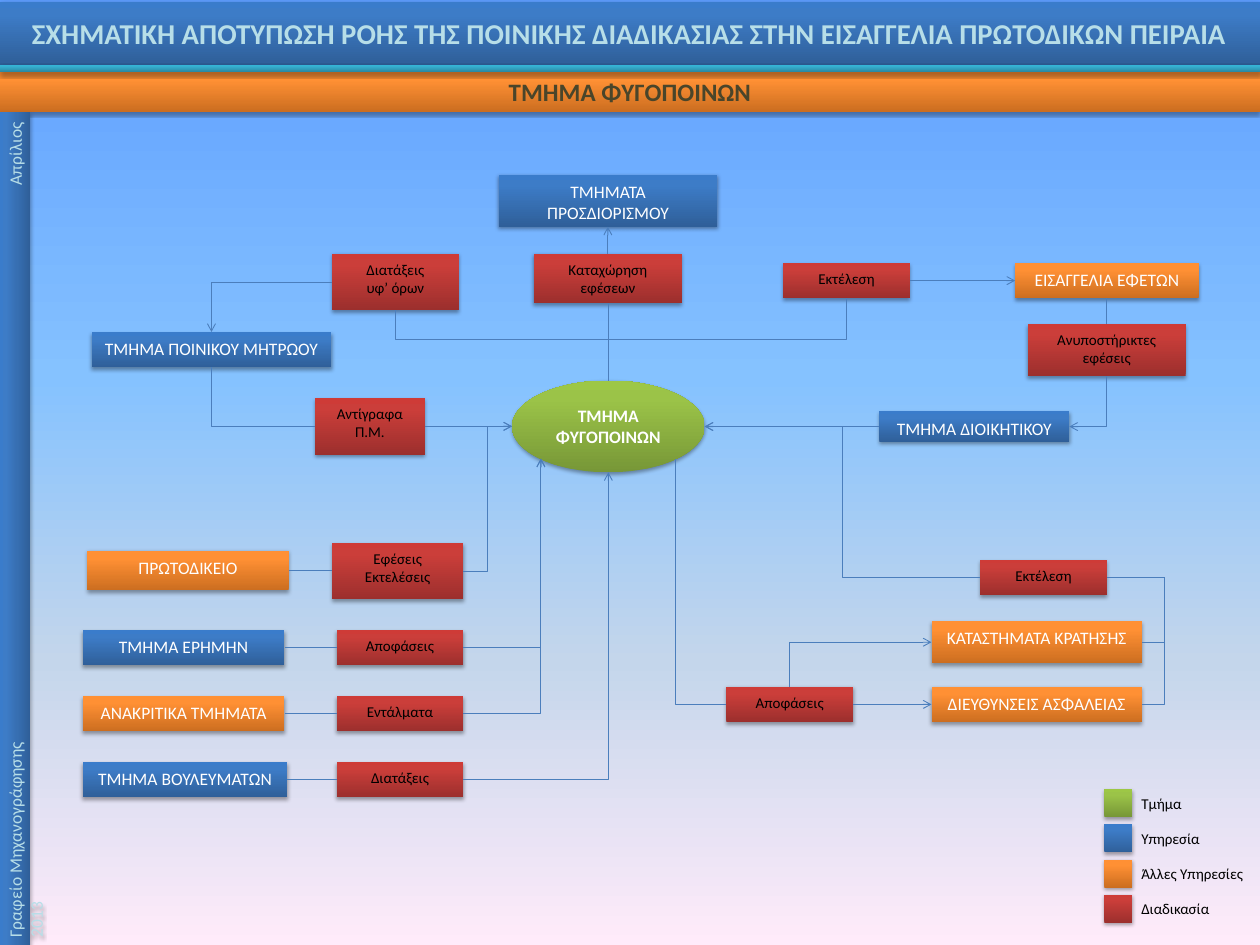
from lxml.etree import SubElement
from pptx import Presentation
from pptx.dml.color import RGBColor as Rgb
from pptx.enum.shapes import MSO_CONNECTOR as Link, MSO_SHAPE as Shape
from pptx.enum.text import MSO_ANCHOR as Anchor, PP_ALIGN as Align
from pptx.oxml.ns import qn
from pptx.util import Cm, Pt

COLORS = {"white": "FFFFFF", "black": "000000", "pale": "B7DEE8",
          "olive": "4A452A", "link": "4B7EBC"}
GRADIENTS = {
    "green": {0: "779737", 80: "9BC348", 100: "9DC746"},
    "blue": {0: "2F5F99", 80: "3D7CC7", 100: "3A7CCB"},
    "orange": {0: "CC6E20", 80: "FF9034", 100: "FF9136"},
    "red": {0: "9C2F2D", 80: "CB3E3A", 100: "CE3B37"},
    "teal": {0: "2A88A2", 80: "37B1D2", 100: "34B4D6"},
    "sky": {0: "5E9EFF", 40: "85C2FF", 70: "C4D6EB", 100: "FFEBFA"},
}
# Connection points as fractions of a node's width and height
PORTS = {"top": (0.5, 0), "bottom": (0.5, 1), "left": (0, 0.5), "right": (1, 0.5),
         "sw": (0.15, 0.85), "se": (0.85, 0.85)}
WIDE, NARROW = (0.36, 0.18), (0.25, 0.13)
SLIDE_W, SLIDE_H = 35.56, 26.67
ROW_TOP, ROW_STEP = 17.78, 1.86
LEGEND_TOP, LEGEND_STEP = 22.28, 0.99

DEPARTMENTS = {
    "scheduling": ("blue", (14.08, 4.93, 6.17, 1.47), "ΤΜΗΜΑΤΑ ΠΡΟΣΔΙΟΡΙΣΜΟΥ"),
    "appeal office": ("orange", (28.65, 7.42, 5.18, 1), "ΕΙΣΑΓΓΕΛΙΑ ΕΦΕΤΩΝ"),
    "court": ("orange", (2.46, 15.54, 5.69, 1.12), "ΠΡΩΤΟΔΙΚΕΙΟ"),
    "prisons": ("orange", (26.29, 17.53, 5.94, 1.19), "ΚΑΤΑΣΤΗΜΑΤΑ ΚΡΑΤΗΣΗΣ"),
    "police": ("orange", (26.29, 19.38, 5.94, 1), "ΔΙΕΥΘΥΝΣΕΙΣ ΑΣΦΑΛΕΙΑΣ"),
    "administration": ("blue", (24.82, 11.61, 5.36, 0.86), "ΤΜΗΜΑ ΔΙΟΙΚΗΤΙΚΟΥ"),
    "records": ("blue", (2.59, 9.37, 6.76, 1), "ΤΜΗΜΑ ΠΟΙΝΙΚΟΥ ΜΗΤΡΩΟΥ"),
}
PROCEDURES = {
    "appeals": ((9.37, 15.32, 3.71, 1.6), "Εφέσεις", "Εκτελέσεις"),
    "registration": ((15.06, 7.16, 4.19, 1.4), "Καταχώρηση", "εφέσεων"),
    "decisions": ((20.5, 19.38, 3.58, 1), "Αποφάσεις"),
    "execution": ((27.66, 15.8, 3.58, 1), "Εκτέλεση"),
    "unsupported": ((29.01, 9.14, 4.45, 1.47), "Ανυποστήρικτες", "εφέσεις"),
    "conditional": ((9.37, 7.16, 3.58, 1.6), "Διατάξεις", "υφ’ όρων"),
    "appeal execution": ((22.1, 7.42, 3.58, 1), "Εκτέλεση"),
    "copies": ((8.89, 11.23, 3.1, 1.6), "Αντίγραφα", "Π.Μ."),
}
# Service colour, service, its width, procedure, and the hub port it leads to
ROWS = [
    ("blue", "ΤΜΗΜΑ ΕΡΗΜΗΝ", 5.69, "Αποφάσεις", "sw"),
    ("orange", "ΑΝΑΚΡΙΤΙΚΑ ΤΜΗΜΑΤΑ", 5.69, "Εντάλματα", "sw"),
    ("blue", "ΤΜΗΜΑ ΒΟΥΛΕΥΜΑΤΩΝ", 5.77, "Διατάξεις", "bottom"),
]
LEGEND = [("green", "Τμήμα"), ("blue", "Υπηρεσία"),
          ("orange", "Άλλες Υπηρεσίες"), ("red", "Διαδικασία")]
# Start, port, end, port, route, arrow, and where the middle leg lies
FLOWS = [
    ("court", "right", "appeals", "left", "straight", False),
    ("appeals", "right", "hub", "left", "hvh", True),
    ("hub", "top", "registration", "bottom", "straight", False),
    ("registration", "top", "scheduling", "bottom", "straight", True),
    ("hub", "se", "decisions", "left", "vh", False),
    ("decisions", "right", "police", "left", "straight", True),
    ("decisions", "top", "prisons", "left", "vh", True),
    ("police", "right", "execution", "right", "hvh", False, -0.65),
    ("prisons", "right", "execution", "right", "hvh", False, -0.65),
    ("execution", "left", "hub", "right", "hvh", True),
    ("appeal execution", "right", "appeal office", "left", "straight", True),
    ("appeal office", "bottom", "unsupported", "top", "straight", False),
    ("unsupported", "bottom", "administration", "right", "vh", True),
    ("administration", "left", "hub", "right", "straight", True),
    ("hub", "top", "appeal execution", "bottom", "vhv", False),
    ("conditional", "bottom", "hub", "top", "vhv", False, 0.42),
    ("conditional", "left", "records", "top", "hv", True),
    ("records", "bottom", "copies", "left", "vh", False),
    ("copies", "right", "hub", "left", "straight", True),
]


class FlowSlide:
    font = "Calibri"

    def __init__(self, slide):
        self.slide = slide
        self.nodes = {}

    def gradient(self, fill, owner, name, angle):
        fill.gradient()
        fill.gradient_angle = angle
        stops = next(owner.iter(qn("a:gsLst")))
        for stop in list(stops):
            stops.remove(stop)
        for position, color in GRADIENTS[name].items():
            stop = SubElement(stops, qn("a:gs"), pos=str(position * 1000))
            SubElement(stop, qn("a:srgbClr"), val=color)

    def background(self, name):
        self.gradient(self.slide.background.fill, self.slide.element, name, 270)

    def wording(self, frame, lines, size, color, bold=False, align=Align.CENTER,
                insets=WIDE, anchor=Anchor.TOP):
        frame.word_wrap = True
        frame.vertical_anchor = anchor
        frame.margin_left = frame.margin_right = Cm(insets[0])
        frame.margin_top = frame.margin_bottom = Cm(insets[1])
        for i, line in enumerate(lines):
            paragraph = frame.add_paragraph() if i else frame.paragraphs[0]
            paragraph.alignment = align
            run = paragraph.add_run()
            run.text = line
            run.font.name, run.font.size, run.font.bold = self.font, Pt(size), bold
            run.font.color.rgb = Rgb.from_string(COLORS[color])

    def block(self, box, fill, lines=(), size=14, color="white", kind=Shape.RECTANGLE, **text):
        block = self.slide.shapes.add_shape(kind, *map(Cm, box))
        block.line.fill.background()
        props = block._element.spPr
        self.gradient(block.fill, props, fill, 90)
        block.shadow.inherit = False
        shadow = SubElement(props.find(qn("a:effectLst")), qn("a:outerShdw"), blurRad="40000",
                            dist="23000", dir="5400000", rotWithShape="0")
        tint = SubElement(shadow, qn("a:srgbClr"), val=COLORS["black"])
        SubElement(tint, qn("a:alpha"), val="35000")
        self.wording(block.text_frame, lines, size, color, **text)
        return block

    def node(self, name, box, *args, **style):
        self.nodes[name] = box
        self.block(box, *args, **style)

    def label(self, box, text):
        frame = self.slide.shapes.add_textbox(*map(Cm, box)).text_frame
        self.wording(frame, [text], 12, "black", align=Align.LEFT, insets=NARROW)
        frame.margin_left = Cm(0.54)

    def port(self, name, side):
        left, top, width, height = self.nodes[name]
        across, down = PORTS[side]
        return left + across * width, top + down * height

    def flow(self, start, start_side, end, end_side, route, arrow, middle=0.5):
        """Link two nodes; route names the legs in order, h across and v down."""
        x1, y1 = self.port(start, start_side)
        x2, y2 = self.port(end, end_side)
        arrow_end = "a:tailEnd"
        if route == "straight":
            if start_side in ("left", "right"):
                y2 = y1
            else:
                x2 = x1
        elif route == "vh":  # the same bend as hv, drawn from the other end
            x1, y1, x2, y2 = x2, y2, x1, y1
            arrow_end = "a:headEnd"
        elif route == "vhv":  # hvh ends turned back, then rotated by 90 degrees
            cx, cy, dx, dy = (x1 + x2) / 2, (y1 + y2) / 2, (x2 - x1) / 2, (y2 - y1) / 2
            x1, y1, x2, y2 = cx - dy, cy + dx, cx + dy, cy - dx
        kind = Link.STRAIGHT if route == "straight" else Link.ELBOW
        link = self.slide.shapes.add_connector(kind, *map(Cm, (x1, y1, x2, y2)))
        link.line.color.rgb = Rgb.from_string(COLORS["link"])
        link.line.width = Pt(0.75)
        props = link._element.spPr
        shape = props.find(qn("a:prstGeom"))
        if route in ("hv", "vh"):
            shape.set("prst", "bentConnector2")
        elif route != "straight":
            SubElement(shape.find(qn("a:avLst")), qn("a:gd"), name="adj1",
                       fmla=f"val {round(middle * 100000)}")
        if route == "vhv":
            props.find(qn("a:xfrm")).set("rot", "5400000")
        if arrow:
            SubElement(props.find(qn("a:ln")), qn(arrow_end), type="arrow")
        SubElement(props, qn("a:effectLst"))

    def sidebar(self, box, lines, tab):
        bar = self.block(box, "blue", lines, 14, "pale", align=Align.LEFT, insets=NARROW)
        bar.rotation = 270
        settings = bar.text_frame.paragraphs[0]._p.get_or_add_pPr()
        tabs = SubElement(settings, qn("a:tabLst"))
        SubElement(tabs, qn("a:tab"), pos=str(Cm(tab)), algn="r")


def main():
    deck = Presentation()
    deck.slide_width, deck.slide_height = Cm(SLIDE_W), Cm(SLIDE_H)
    chart = FlowSlide(deck.slides.add_slide(deck.slide_layouts[6]))
    chart.background("sky")

    chart.node("hub", (14.45, 10.74, 5.44, 2.59), "green", ["ΤΜΗΜΑ ΦΥΓΟΠΟΙΝΩΝ"],
               kind=Shape.OVAL, bold=True, insets=NARROW, anchor=Anchor.MIDDLE)
    for name, (fill, box, text) in DEPARTMENTS.items():
        chart.node(name, box, fill, [text])
    for name, (box, *lines) in PROCEDURES.items():
        chart.node(name, box, "red", lines, 12, "black")
    for i, (fill, service, width, procedure, hub_port) in enumerate(ROWS):
        top = ROW_TOP + i * ROW_STEP
        chart.node(service, (2.34, top, width, 1), fill, [service])
        chart.node(procedure, (9.5, top, 3.58, 1), "red", [procedure], 12, "black")
        chart.flow(service, "right", procedure, "left", "straight", False)
        chart.flow(procedure, "right", "hub", hub_port, "hv", True)
    for flow in FLOWS:
        chart.flow(*flow)

    for i, (fill, text) in enumerate(LEGEND):
        top = LEGEND_TOP + i * LEGEND_STEP
        chart.block((31.17, top, 0.79, 0.79), fill)
        chart.label((31.67, top, 3.89, 0.77), text)

    chart.block((0, 2.03, SLIDE_W, 1.12), "orange", ["ΤΜΗΜΑ ΦΥΓΟΠΟΙΝΩΝ"], 20, "olive",
                bold=True, insets=NARROW)
    chart.block((0, 0.05, SLIDE_W, 1.78), "blue",
                ["ΣΧΗΜΑΤΙΚΗ ΑΠΟΤΥΠΩΣΗ ΡΟΗΣ ΤΗΣ ΠΟΙΝΙΚΗΣ ΔΙΑΔΙΚΑΣΙΑΣ "
                 "ΣΤΗΝ ΕΙΣΑΓΓΕΛΙΑ ΠΡΩΤΟΔΙΚΩΝ ΠΕΙΡΑΙΑ"],
                23, "pale", bold=True, anchor=Anchor.MIDDLE)
    chart.sidebar((-11.35, 14.5, 23.55, 0.86),
                  ["Γραφείο Μηχανογράφησης\tΑπρίλιος", "2013"], tab=23)
    chart.block((0, 1.83, SLIDE_W, 0.2), "teal")
    deck.save("out.pptx")


if __name__ == "__main__":
    main()
